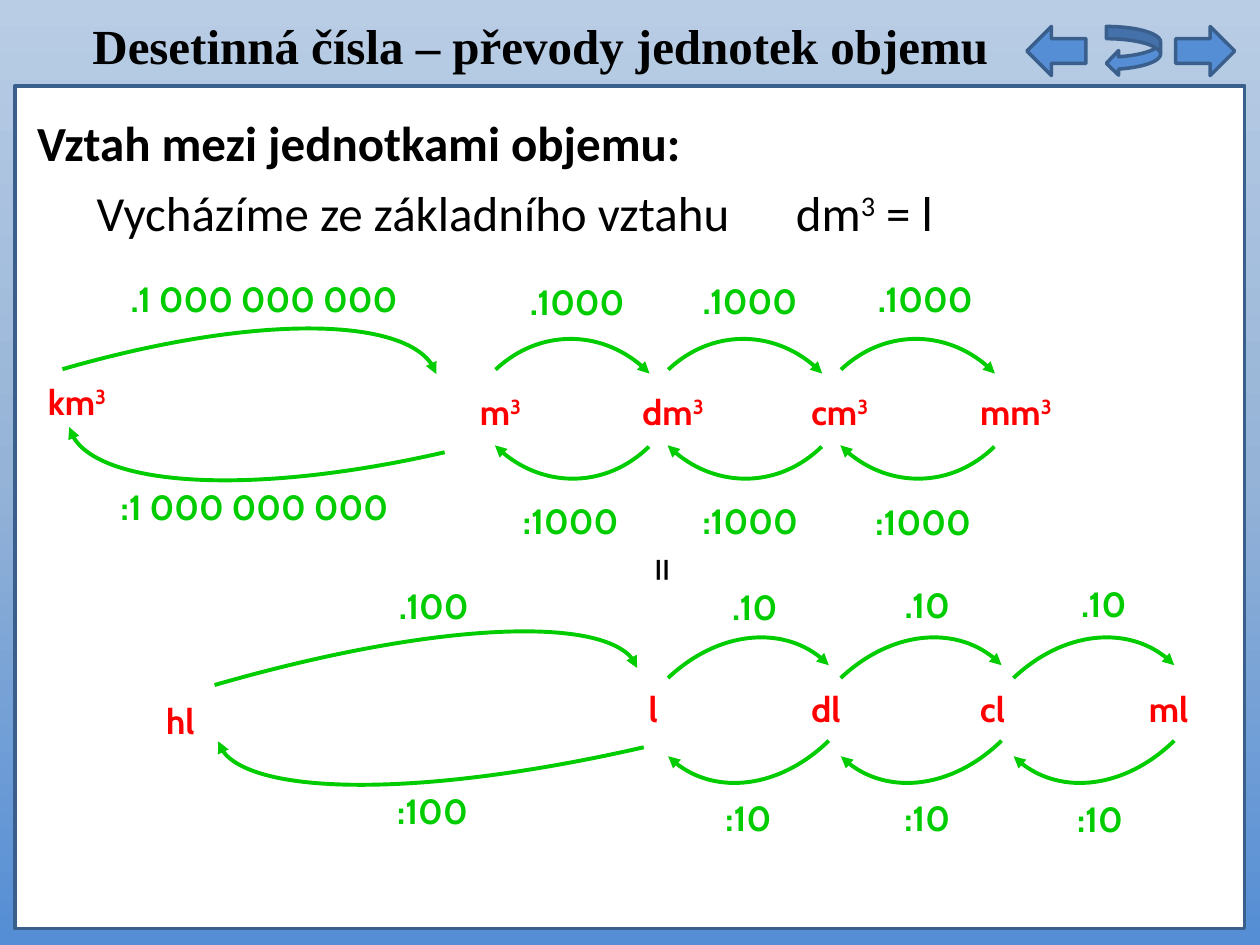
"""Build a slide on converting decimal units of volume."""
from copy import deepcopy

from lxml import etree
from pptx import Presentation
from pptx.dml.color import RGBColor
from pptx.enum.shapes import MSO_SHAPE
from pptx.enum.text import MSO_ANCHOR, PP_ALIGN
from pptx.oxml.ns import qn
from pptx.util import Pt

RECT, LEFT_ARROW = MSO_SHAPE.RECTANGLE, MSO_SHAPE.LEFT_ARROW
RIGHT_ARROW, RETURN_ARROW = MSO_SHAPE.RIGHT_ARROW, MSO_SHAPE.CURVED_LEFT_ARROW
LEFT, CENTER = PP_ALIGN.LEFT, PP_ALIGN.CENTER
TOP, MIDDLE = MSO_ANCHOR.TOP, MSO_ANCHOR.MIDDLE

COLORS = {"sky": "B9CDE5", "mid": "95B3D7", "blue": "558ED5", "edge": "3A5F8C",
          "white": "FFFFFF", "black": "000000", "unit": "FF0000", "factor": "00CC00"}
BACKGROUND = [(0, "sky"), (0.5, "mid"), (1, "blue")]

PANEL_AND_BUTTONS = [
    (RECT, "white", (8.6, 49, 702.7, 481.7)),
    (RIGHT_ARROW, "blue", (671.8, 15.1, 33.8, 28.1)),
    (LEFT_ARROW, "blue", (586.8, 15.1, 33.8, 28.1)),
    (RETURN_ARROW, "blue", (632.2, 15.1, 31, 28.1)),
]

TITLE = "Desetinná čísla – převody jednotek objemu"
HEADING = "Vztah mezi jednotkami objemu:"
RELATION = [("Vycházíme ze základního vztahu\tdm", False), ("3", True), (" = l", False)]
RELATION_TAB = 399.6

UNITS = [
    ("km", "3", (20.2, 207.4, 51.1, 43.9)),
    ("m", "3", (267.1, 216.7, 128.9, 36.7)),
    ("dm", "3", (360, 216.7, 128.9, 36.7)),
    ("cm", "3", (456.5, 216.7, 128.9, 36.7)),
    ("mm", "3", (553, 216.7, 59.8, 36.7)),
    ("hl", "", (87.8, 394.6, 51.1, 33.8)),
    ("l", "", (363.6, 388.1, 147.6, 33.8)),
    ("dl", "", (456.5, 388.1, 147.6, 33.8)),
    ("cl", "", (553, 388.1, 147.6, 33.8)),
    ("ml", "", (649.4, 388.1, 68.4, 33.8)),
]

STEP = 98.7
QUARTER_ELLIPSE = [(0, 0), (0.55, 0), (1, 0.45), (1, 1)]
CONVERSIONS = [
    (".1 000 000 000", CENTER, (225.4, 29.5), [(38.2, 155.7)],
     (40.3, 181.4, 204.5, 61.9), 343.9),
    (":1 000 000 000", CENTER, (247.7, 29.5), [(21.6, 274.8)],
     (43.9, 220.3, 205.9, 61.9), 167.1),
    (".1000", LEFT, (69.1, 29.5), [(295.7, 157.7), (394.4, 157), (494.6, 156)],
     (295.9, 181.4, 62.6, 61.9), 316.8),
    (":1000", LEFT, (69.1, 29.5), [(291.8, 282.4), (394.4, 282.4), (493.2, 283)],
     (295.5, 223.9, 62.6, 61.9), 135.8),
    (".100", CENTER, (258.5, 27.4), [(118.6, 332.4)],
     (126, 357.8, 234.7, 57.6), 343.9),
    (":100", CENTER, (283.7, 27.4), [(105.3, 449.3)],
     (128.2, 396.5, 236.2, 57.6), 167.1),
    (".10", CENTER, (79.2, 27.4), [(391.7, 332.6), (490.3, 331.7), (591.1, 331.2)],
     (391.7, 355, 72, 57.6), 316.8),
    (":10", CENTER, (79.2, 27.4), [(388.1, 453.6), (490.3, 453.6), (589, 454.1)],
     (391.7, 398.9, 72, 57.6), 135.8),
]


def rgb(name):
    return RGBColor.from_string(COLORS[name])


def paint_background(slide):
    fill = slide.background.fill
    fill.gradient()
    fill.gradient_angle = 270
    stops = next(slide._element.iter(qn("a:gsLst")))
    stops.append(deepcopy(stops[-1]))
    for stop, (position, color) in zip(fill.gradient_stops, BACKGROUND):
        stop.position = position
        stop.color.rgb = rgb(color)


def add_shape(slide, kind, color, box):
    s = slide.shapes.add_shape(kind, *map(Pt, box))
    s.shadow.inherit = False
    s.fill.solid()
    s.fill.fore_color.rgb = rgb(color)
    s.line.color.rgb = rgb("edge")
    s.line.width = Pt(2)


def add_text(slide, runs, box, font, size, color="black", bold=False,
             align=LEFT, anchor=MIDDLE):
    s = slide.shapes.add_textbox(*map(Pt, box))
    tf = s.text_frame
    tf.word_wrap = True
    tf.vertical_anchor = anchor
    p = tf.paragraphs[0]
    p.alignment = align
    p.font.name, p.font.size, p.font.bold = font, Pt(size), bold
    p.font.color.rgb = rgb(color)
    for text, raised in runs:
        r = p.add_run()
        r.text = text
        if raised:
            r.font._element.set("baseline", "30000")
    return s


def add_curved_arrow(slide, left, top, width, height, rotation):
    start, *rest = [(Pt(left + x * width), Pt(top + y * height))
                    for x, y in QUARTER_ELLIPSE]
    builder = slide.shapes.build_freeform(*start)
    builder.add_line_segments(rest, close=False)
    s = builder.convert_to_shape()
    s.rotation = rotation
    s.shadow.inherit = False
    s.fill.background()
    s.line.color.rgb = rgb("factor")
    s.line.width = Pt(2.25)
    etree.SubElement(s.line._get_or_add_ln(), qn("a:tailEnd"), type="triangle")
    segments = list(s._element.iter(qn("a:lnTo")))
    curve = etree.SubElement(segments[0].getparent(), qn("a:cubicBezTo"))
    for segment in segments:
        curve.append(segment[0])
        segment.getparent().remove(segment)


def main():
    prs = Presentation()
    prs.slide_width, prs.slide_height = Pt(720), Pt(540)
    slide = prs.slides.add_slide(prs.slide_layouts[6])
    paint_background(slide)
    for kind, color, box in PANEL_AND_BUTTONS:
        add_shape(slide, kind, color, box)

    add_text(slide, [(TITLE, False)], (2, -2.2, 613.4, 55.4), "Times New Roman", 28,
             bold=True, align=CENTER)
    add_text(slide, [(HEADING, False)], (14.2, 54.7, 595.4, 53.3), "Calibri", 28, bold=True)
    s = add_text(slide, RELATION, (48.2, 94.3, 595.4, 53.3), "Calibri", 28)
    pPr = s.text_frame.paragraphs[0]._p.get_or_add_pPr()
    tabs = etree.Element(qn("a:tabLst"))
    etree.SubElement(tabs, qn("a:tab"), pos=str(Pt(RELATION_TAB)), algn="l")
    pPr.find(qn("a:defRPr")).addprevious(tabs)
    s = add_text(slide, [("=", False)], (330.2, 305.3, 92.2, 41), "Calibri", 28,
                 align=CENTER, anchor=TOP)
    s.rotation = 270

    for unit, power, box in UNITS:
        runs = [(unit, False)] + ([(power, True)] if power else [])
        add_text(slide, runs, box, "Cabin", 20, "unit", True)
    for factor, align, size, places, (left, top, width, height), rotation in CONVERSIONS:
        for i, place in enumerate(places):
            add_curved_arrow(slide, left + i * STEP, top, width, height, rotation)
            add_text(slide, [(factor, False)], place + size, "Cabin", 20, "factor", True, align)
    prs.save("out.pptx")


if __name__ == "__main__":
    main()
